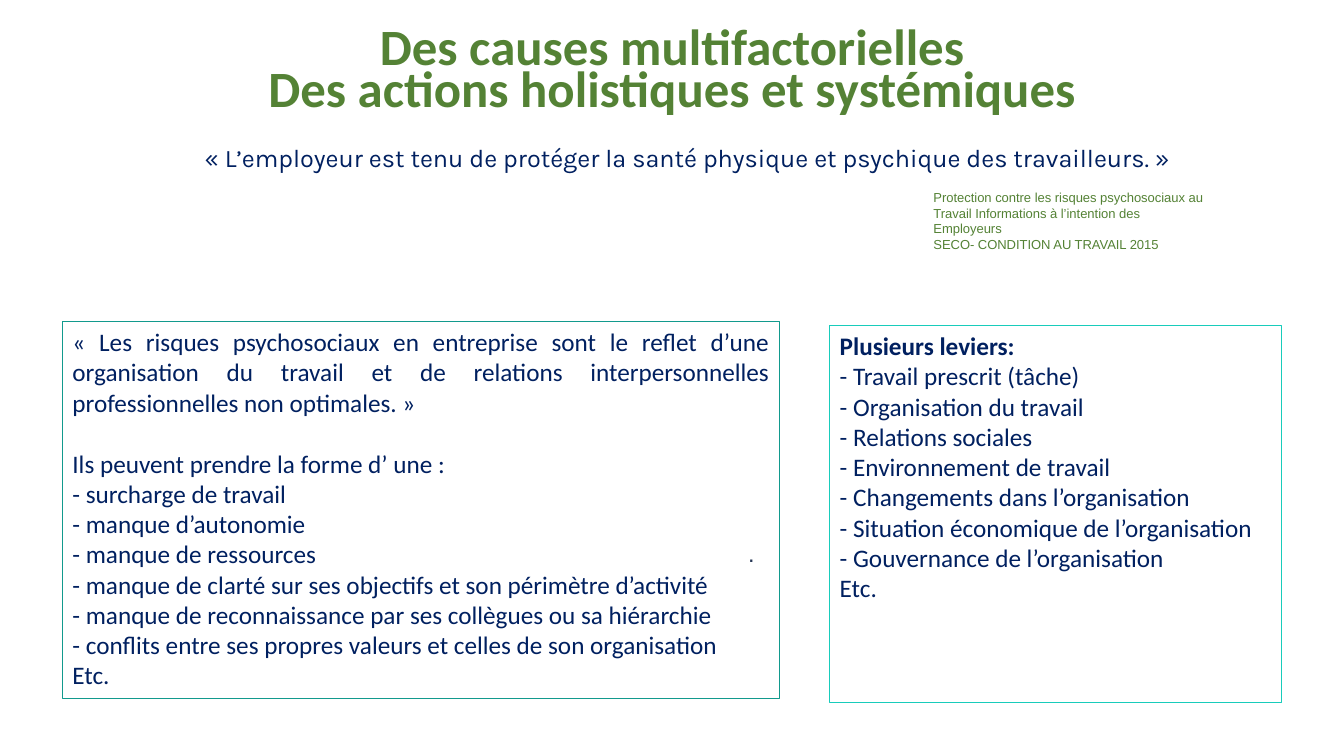
from dataclasses import dataclass

from pptx import Presentation
from pptx.dml.color import RGBColor as Color
from pptx.enum.shapes import MSO_SHAPE as Preset
from pptx.enum.text import MSO_ANCHOR as Anchor, PP_ALIGN as Align
from pptx.util import Inches, Pt


@dataclass(frozen=True)
class Theme:
    green: str = "548235"
    navy: str = "002060"
    slate: str = "273755"
    teal: str = "129A8D"
    turquoise: str = "18CCBB"
    heading: str = "Calibri"
    quote: str = "Karla"
    small: str = "Arial"
    title_size: float = 36.3
    body_size: float = 18
    dot_size: float = 16.7
    source_size: float = 9.3
    dot_spacing: float = 27.3
    border: float = 0.75
    paragraph_gap: float = 22


THEME = Theme()

TITLE = ["Des causes multifactorielles", "Des actions holistiques et systémiques"]
QUOTE = ["« L’employeur est tenu de protéger la santé physique et psychique des travailleurs. »"]
SOURCE = [
    "Protection contre les risques psychosociaux au",
    "Travail Informations à l’intention des",
    "Employeurs",
    "SECO- CONDITION AU TRAVAIL 2015",
]
LEVERS = [
    "Plusieurs leviers:",
    "- Travail prescrit (tâche)",
    "- Organisation du travail",
    "- Relations sociales",
    "- Environnement de travail",
    "- Changements dans l’organisation",
    "- Situation économique de l’organisation",
    "- Gouvernance de l’organisation",
    "Etc.",
]
RISKS = [
    "« Les risques psychosociaux en entreprise sont le reflet d’une organisation du travail "
    "et de relations interpersonnelles professionnelles non optimales. »",
    "Ils peuvent prendre la forme d’ une :",
    "- surcharge de travail",
    "- manque d’autonomie",
    "- manque de ressources",
    "- manque de clarté sur ses objectifs et son périmètre d’activité",
    "- manque de reconnaissance par ses collègues ou sa hiérarchie",
    "- conflits entre ses propres valeurs et celles de son organisation",
    "Etc.",
]


def write(shape, lines, font_name, size, color):
    frame = shape.text_frame
    frame.word_wrap = True
    frame.vertical_anchor = Anchor.TOP
    frame.text = "\n".join(lines)
    for paragraph in frame.paragraphs:
        paragraph.alignment = Align.LEFT
        paragraph.font.name = font_name
        paragraph.font.size = Pt(size)
        paragraph.font.color.rgb = Color.from_string(color)
    return frame


def add_text(slide, box, *style):
    return write(slide.shapes.add_textbox(*map(Inches, box)), *style)


def add_panel(slide, box, border, lines):
    shape = slide.shapes.add_shape(Preset.RECTANGLE, *map(Inches, box))
    shape.shadow.inherit = False
    shape.fill.background()
    shape.line.color.rgb = Color.from_string(border)
    shape.line.width = Pt(THEME.border)
    return write(shape, lines, THEME.heading, THEME.body_size, THEME.navy)


def main():
    presentation = Presentation()
    presentation.slide_width = Inches(13.33)
    presentation.slide_height = Inches(7.5)
    slide = presentation.slides.add_slide(presentation.slide_layouts[6])

    dot = add_text(slide, (7.42, 5.25, 5.16, 0.72), ["."],
                   THEME.small, THEME.dot_size, THEME.slate)
    dot.margin_left = dot.margin_top = dot.margin_right = dot.margin_bottom = 0
    dot.paragraphs[0].line_spacing = Pt(THEME.dot_spacing)

    title = add_text(slide, (0.92, 0.22, 11.5, 1.45), TITLE,
                     THEME.heading, THEME.title_size, THEME.green)
    title.vertical_anchor = Anchor.MIDDLE
    title.margin_bottom = Inches(0.48)
    for paragraph in title.paragraphs:
        paragraph.alignment = Align.CENTER
        paragraph.line_spacing = 0.7
        paragraph.font.bold = True

    add_text(slide, (1.93, 1.36, 9.93, 0.4), QUOTE,
             THEME.quote, THEME.body_size, THEME.navy)

    levers = add_panel(slide, (8.23, 3.23, 4.48, 3.74), THEME.turquoise, LEVERS)
    levers.paragraphs[0].font.bold = True

    add_text(slide, (9.16, 1.83, 3.84, 0.73), SOURCE,
             THEME.small, THEME.source_size, THEME.green)

    risks = add_panel(slide, (0.62, 3.19, 7.11, 3.74), THEME.teal, RISKS)
    risks.paragraphs[0].alignment = Align.JUSTIFY
    risks.paragraphs[1].space_before = Pt(THEME.paragraph_gap)

    presentation.save("out.pptx")


if __name__ == "__main__":
    main()
